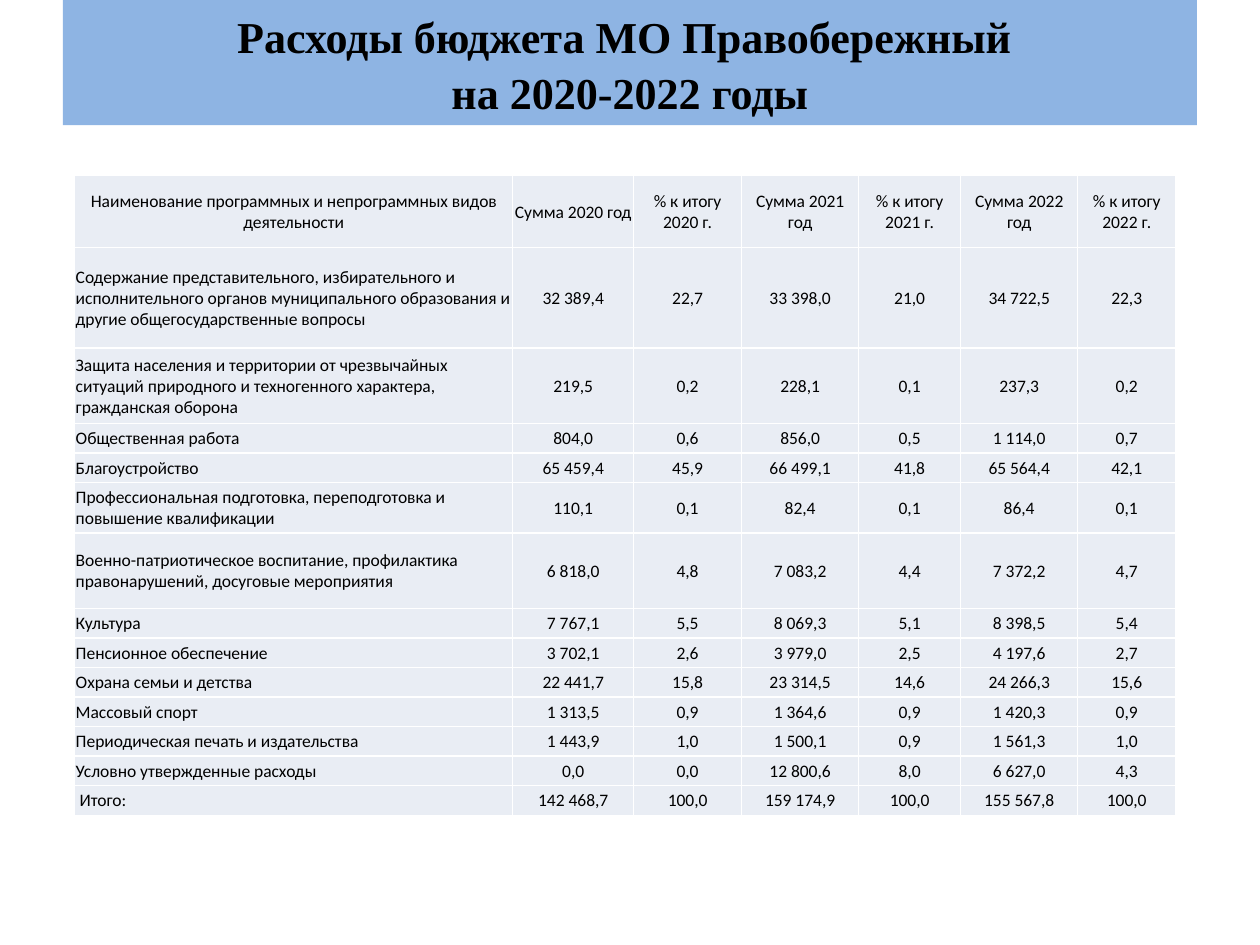
from typing import NamedTuple

from lxml.etree import SubElement
from pptx import Presentation
from pptx.dml.color import RGBColor
from pptx.enum.shapes import MSO_SHAPE
from pptx.enum.text import MSO_ANCHOR, PP_ALIGN
from pptx.oxml.ns import qn
from pptx.slide import Slide
from pptx.table import _Cell
from pptx.text.text import _Paragraph
from pptx.util import Pt

BLACK = RGBColor(0x00, 0x00, 0x00)
WHITE = RGBColor(0xFF, 0xFF, 0xFF)
TITLE_BLUE = RGBColor(0x8E, 0xB4, 0xE3)
CELL_BLUE = RGBColor(0xE9, 0xED, 0xF4)

COLUMN_WIDTHS = (250.3, 69.1, 61.7, 66.9, 58.3, 66.9, 56)
HEADINGS = (
    "Наименование программных и непрограммных видов деятельности",
    "Сумма 2020 год", "% к итогу 2020 г.",
    "Сумма 2021 год", "% к итогу 2021 г.",
    "Сумма 2022 год", "% к итогу 2022 г.",
)
HEADING_HEIGHT = 41.2
LINE_HEIGHT = 16.9


class Expense(NamedTuple):
    name: str
    values: tuple[str, ...]  # sum and share for each year
    height: float = LINE_HEIGHT


EXPENSES = (
    Expense("Содержание представительного, избирательного и исполнительного органов "
            "муниципального образования и другие общегосударственные вопросы",
            ("32 389,4", "22,7", "33 398,0", "21,0", "34 722,5", "22,3"), 57.5),
    Expense("Защита населения и территории от чрезвычайных ситуаций природного "
            "и техногенного характера, гражданская оборона",
            ("219,5", "0,2", "228,1", "0,1", "237,3", "0,2"), 43.1),
    Expense("Общественная работа", ("804,0", "0,6", "856,0", "0,5", "1 114,0", "0,7")),
    Expense("Благоустройство",
            ("65 459,4", "45,9", "66 499,1", "41,8", "65 564,4", "42,1")),
    Expense("Профессиональная подготовка, переподготовка и повышение квалификации",
            ("110,1", "0,1", "82,4", "0,1", "86,4", "0,1"), 28.7),
    Expense("Военно-патриотическое воспитание, профилактика правонарушений, "
            "досуговые мероприятия",
            ("6 818,0", "4,8", "7 083,2", "4,4", "7 372,2", "4,7"), 43.1),
    Expense("Культура", ("7 767,1", "5,5", "8 069,3", "5,1", "8 398,5", "5,4")),
    Expense("Пенсионное обеспечение",
            ("3 702,1", "2,6", "3 979,0", "2,5", "4 197,6", "2,7")),
    Expense("Охрана семьи и детства",
            ("22 441,7", "15,8", "23 314,5", "14,6", "24 266,3", "15,6")),
    Expense("Массовый спорт", ("1 313,5", "0,9", "1 364,6", "0,9", "1 420,3", "0,9")),
    Expense("Периодическая печать и издательства",
            ("1 443,9", "1,0", "1 500,1", "0,9", "1 561,3", "1,0")),
    Expense("Условно утвержденные расходы",
            ("0,0", "0,0", "12 800,6", "8,0", "6 627,0", "4,3")),
    Expense(" Итого:",
            ("142 468,7", "100,0", "159 174,9", "100,0", "155 567,8", "100,0")),
)


def format_runs(paragraph: _Paragraph, font_name: str, size: float, bold: bool) -> None:
    for run in paragraph.runs:
        run.font.name = font_name
        run.font.size = Pt(size)
        run.font.bold = bold
        run.font.color.rgb = BLACK


def draw_title(slide: Slide) -> None:
    shape = slide.shapes.add_shape(MSO_SHAPE.RECTANGLE, Pt(36), Pt(0), Pt(648), Pt(71.5))
    shape.shadow.inherit = False
    shape.fill.solid()
    shape.fill.fore_color.rgb = TITLE_BLUE
    shape.line.fill.background()
    text_frame = shape.text_frame
    text_frame.word_wrap = True
    text_frame.vertical_anchor = MSO_ANCHOR.MIDDLE
    paragraph = text_frame.paragraphs[0]
    paragraph.text = "Расходы бюджета МО Правобережный \vна 2020-2022 годы"
    paragraph.alignment = PP_ALIGN.CENTER
    paragraph.line_spacing = 1.05
    format_runs(paragraph, "Times New Roman", 25.2, True)


def add_borders(cell: _Cell) -> None:
    properties = cell._tc.get_or_add_tcPr()
    for side in ("a:lnL", "a:lnR", "a:lnT", "a:lnB"):
        line = SubElement(properties, qn(side), w=str(Pt(1)))
        fill = SubElement(line, qn("a:solidFill"))
        SubElement(fill, qn("a:srgbClr"), val=str(WHITE))


def draw_cell(cell: _Cell, text: str, alignment: PP_ALIGN) -> None:
    add_borders(cell)
    cell.fill.solid()
    cell.fill.fore_color.rgb = CELL_BLUE
    cell.margin_left = cell.margin_right = cell.margin_top = Pt(0.6)
    cell.margin_bottom = Pt(0)
    cell.vertical_anchor = MSO_ANCHOR.MIDDLE
    paragraph = cell.text_frame.paragraphs[0]
    paragraph.text = text
    paragraph.alignment = alignment
    format_runs(paragraph, "Calibri", 10, False)


def draw_table(slide: Slide) -> None:
    rows = (Expense(HEADINGS[0], HEADINGS[1:], HEADING_HEIGHT), *EXPENSES)
    table = slide.shapes.add_table(
        len(rows), len(COLUMN_WIDTHS), Pt(42.7), Pt(100.3),
        Pt(sum(COLUMN_WIDTHS)), Pt(sum(row.height for row in rows)),
    ).table
    table.first_row = False
    table.horz_banding = False
    for column, width in zip(table.columns, COLUMN_WIDTHS):
        column.width = Pt(width)
    for row_index, row in enumerate(rows):
        table.rows[row_index].height = Pt(row.height)
        for column_index, text in enumerate((row.name, *row.values)):
            is_name = row_index > 0 and column_index == 0
            alignment = PP_ALIGN.LEFT if is_name else PP_ALIGN.CENTER
            draw_cell(table.cell(row_index, column_index), text, alignment)


def main() -> None:
    presentation = Presentation()
    presentation.slide_width = Pt(720)
    presentation.slide_height = Pt(540)
    slide = presentation.slides.add_slide(presentation.slide_layouts[6])

    # Title band
    draw_title(slide)
    # Budget expenses by year
    draw_table(slide)

    presentation.save("out.pptx")


if __name__ == "__main__":
    main()
